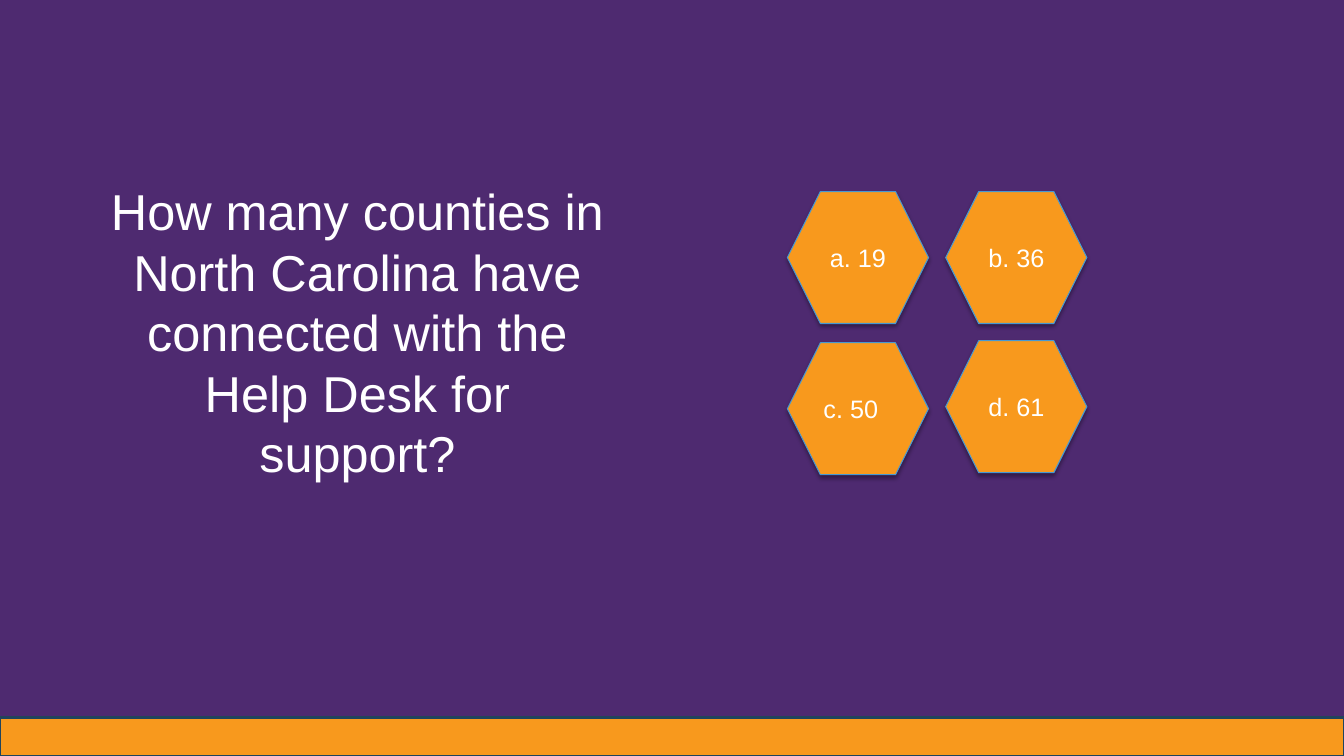
import lxml.etree
import pptx
import pptx.dml.color
import pptx.enum.shapes
import pptx.enum.text
import pptx.oxml.ns
import pptx.util

Inches = pptx.util.Inches
Pt = pptx.util.Pt
RGBColor = pptx.dml.color.RGBColor
Shape = pptx.enum.shapes.MSO_SHAPE
qn = pptx.oxml.ns.qn

PURPLE = RGBColor(0x4E, 0x2A, 0x70)
ORANGE = RGBColor(0xF8, 0x99, 0x1D)
BLUE = RGBColor(0x46, 0x99, 0xD2)
NAVY = RGBColor(0x21, 0x44, 0x5C)
WHITE = RGBColor(0xFF, 0xFF, 0xFF)
SHADOW = RGBColor(0, 0, 0)

QUESTION = (
    "How many counties in North Carolina have connected "
    "with the Help Desk for support?"
)
LEFT_COLUMN, RIGHT_COLUMN = 7.81, 9.38
ANSWERS = [
    ("a. 19", LEFT_COLUMN, 1.9, 0.1),
    ("b. 36", RIGHT_COLUMN, 1.9, 0.1),
    ("c. 50", LEFT_COLUMN, 3.4, 0.24),
    ("d. 61", RIGHT_COLUMN, 3.38, 0.1),
]


def write_text(shape, text, size, anchor):
    frame = shape.text_frame
    frame.text = text
    frame.word_wrap = True
    frame.vertical_anchor = anchor
    para = frame.paragraphs[0]
    para.alignment = pptx.enum.text.PP_ALIGN.CENTER
    font = para.runs[0].font
    font.name = "Arial"
    font.size = Pt(size)
    font.color.rgb = WHITE


def add_block(slide, kind, left, top, width, height, fill_color):
    block = slide.shapes.add_shape(
        kind, Inches(left), Inches(top), Inches(width), Inches(height)
    )
    block.shadow.inherit = False
    block.fill.solid()
    block.fill.fore_color.rgb = fill_color
    block.line.fill.background()
    return block


def set_outline(shape, color, width):
    shape.line.color.rgb = color
    shape.line.width = Pt(width)


def add_drop_shadow(shape):
    effects = shape._element.spPr.find(qn("a:effectLst"))
    shadow = lxml.etree.SubElement(
        effects, qn("a:outerShdw"), blurRad=str(Pt(3.1)), dist=str(Pt(1.8)),
        dir="5400000", rotWithShape="0",
    )
    color = lxml.etree.SubElement(shadow, qn("a:srgbClr"), val=str(SHADOW))
    lxml.etree.SubElement(color, qn("a:alpha"), val="35000")


def add_backdrop(slide):
    backdrop = add_block(slide, Shape.RECTANGLE, 0, 0, 13.33, 7.39, PURPLE)
    slide.shapes.title._element.addprevious(backdrop._element)


def add_question(slide):
    title = slide.shapes.title
    title.left, title.top = Inches(1), Inches(1.74)
    title.width, title.height = Inches(5.09), Inches(3.13)
    write_text(title, QUESTION, 36, pptx.enum.text.MSO_ANCHOR.TOP)
    frame = title.text_frame
    frame.margin_left = frame.margin_right = Inches(0.05)
    frame.auto_size = pptx.enum.text.MSO_AUTO_SIZE.NONE


def add_answer(slide, text, left, top, right_inset):
    hexagon = add_block(slide, Shape.HEXAGON, left, top, 1.4, 1.31, ORANGE)
    set_outline(hexagon, BLUE, 0.75)
    add_drop_shadow(hexagon)
    write_text(hexagon, text, 18, pptx.enum.text.MSO_ANCHOR.MIDDLE)
    hexagon.text_frame.margin_right = Inches(right_inset)


def main():
    deck = pptx.Presentation()
    deck.slide_width, deck.slide_height = Inches(13.33), Inches(7.5)
    slide = deck.slides.add_slide(deck.slide_layouts.get_by_name("Title Only"))
    add_backdrop(slide)
    add_question(slide)
    for answer in ANSWERS:
        add_answer(slide, *answer)
    bar = add_block(slide, Shape.RECTANGLE, 0, 7.12, 13.33, 0.38, ORANGE)
    set_outline(bar, NAVY, 2)
    deck.save("out.pptx")


if __name__ == "__main__":
    main()
